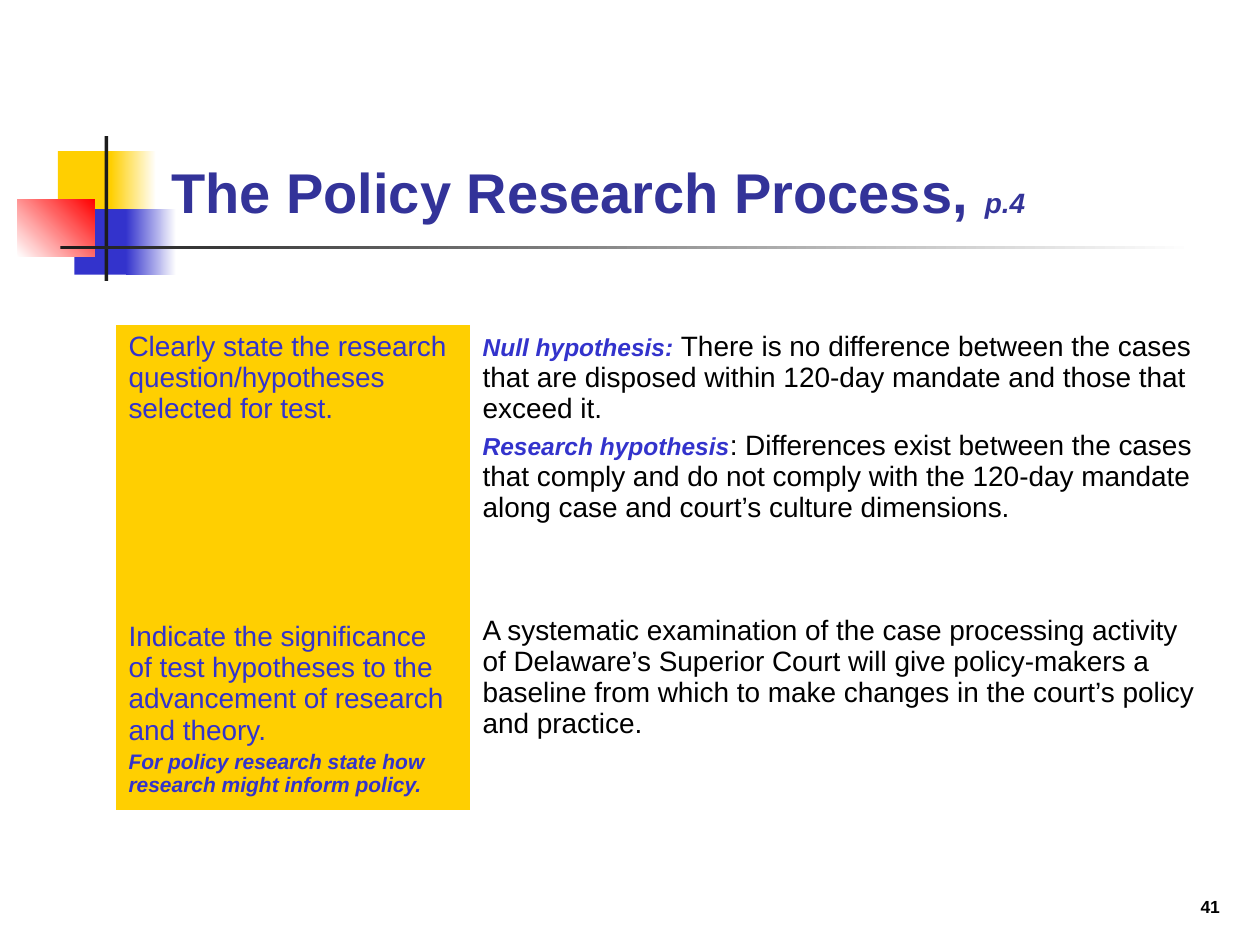
from lxml.etree import SubElement
from pptx import Presentation
from pptx.dml.color import RGBColor
from pptx.enum.shapes import MSO_SHAPE as SHAPE
from pptx.enum.text import MSO_ANCHOR as ANCHOR, PP_ALIGN as ALIGN
from pptx.oxml.ns import qn
from pptx.util import Inches, Pt

# Content
YELLOW, BLUE, RED = "FFCF01", "3333CC", "FF0000"
NAVY, DARK, BLACK, WHITE = "333399", "1C1C1C", "000000", "FFFFFF"
NO_GRID = "{2D5ABB26-0587-4C30-8999-92F81FD0307C}"

# Runs are (text, size, colour, bold, italic)
TITLE = [("The Policy Research Process, ", 32, NAVY, True, False),
         ("p.4", 16, NAVY, True, True)]
NUMBER = [("41", 10, BLACK, True, False)]


def plain(text, color=BLACK):
    return text, 16, color, False, False


def label(text, size=14):
    return text, size, BLUE, True, True


# Rows of cells, each cell a list of paragraphs, each paragraph a list of runs
ROWS = [
    [[[plain("Clearly state the research question/hypotheses selected for test.", BLUE)]],
     [[label("Null hypothesis:"),
       plain(" There is no difference between the cases that are disposed within "
             "120-day mandate and those that exceed it.")],
      [label("Research hypothesis"),
       plain(": Differences exist between the cases that comply and do not comply "
             "with the 120-day mandate along case and court’s culture dimensions.")]]],
    [[[plain("Indicate the significance of test hypotheses to the advancement of "
             "research and theory.", BLUE)],
      [label("For policy research state how research might inform policy.", 12)]],
     [[plain("A systematic examination of the case processing activity of Delaware’s "
             "Superior Court will give policy-makers a baseline from which to make "
             "changes in the court’s policy and practice.")]]],
]
COL_WIDTHS, ROW_HEIGHTS = (2.81, 5.94), (2.25, 1.49)

# Ornament bars: box, colours (two make a gradient), angle
BARS = [
    ((0.46, 1.2, 0.48, 0.52), [YELLOW], 0),
    ((0.88, 1.2, 0.36, 0.52), [YELLOW, WHITE], 0),
    ((0.59, 1.66, 0.46, 0.52), [BLUE], 0),
    ((1, 1.66, 0.4, 0.52), [BLUE, WHITE], 0),
    ((0.14, 1.58, 0.61, 0.46), [WHITE, RED], 45),
    ((0.83, 1.08, 0.03, 1.15), [DARK], 0),
    ((0.48, 1.95, 9, 0.03), [DARK, WHITE], 0),
]


def rgb(value):
    return RGBColor.from_string(value)


def box(values):
    return [Inches(v) for v in values]


def add_runs(p, runs):
    for text, size, color, bold, italic in runs:
        r = p.add_run()
        r.text = text
        r.font.name, r.font.size = "Arial", Pt(size)
        r.font.bold, r.font.italic = bold, italic
        r.font.color.rgb = rgb(color)


def space_before(p, percent):
    spacing = SubElement(p._p.get_or_add_pPr(), qn("a:spcBef"))
    SubElement(spacing, qn("a:spcPct")).set("val", str(percent * 1000))


prs = Presentation()
prs.slide_width, prs.slide_height = Inches(10), Inches(7.5)
s = prs.slides.add_slide(prs.slide_layouts[5])

# Title, with the ornament behind it
title = s.shapes.title
title.left, title.top, title.width, title.height = box((1.26, 0.23, 8.52, 1.6))
tf = title.text_frame
tf.word_wrap, tf.vertical_anchor = True, ANCHOR.BOTTOM
tf.paragraphs[0].alignment = ALIGN.LEFT
add_runs(tf.paragraphs[0], TITLE)

for place, colors, angle in BARS:
    sp = s.shapes.add_shape(SHAPE.RECTANGLE, *box(place))
    sp.shadow.inherit = False
    sp.line.fill.background()
    if len(colors) == 1:
        sp.fill.solid()
        sp.fill.fore_color.rgb = rgb(colors[0])
    else:
        sp.fill.gradient()
        sp.fill.gradient_angle = angle
        for stop, color, position in zip(sp.fill.gradient_stops, colors, (0, 1)):
            stop.color.rgb = rgb(color)
            stop.position = position
    title._element.addprevious(sp._element)

# Slide number
tf = s.shapes.add_textbox(*box((7.7, 6.83, 2.08, 0.5))).text_frame
tf.word_wrap, tf.vertical_anchor = True, ANCHOR.BOTTOM
tf.paragraphs[0].alignment = ALIGN.RIGHT
add_runs(tf.paragraphs[0], NUMBER)

# Table
size = sum(COL_WIDTHS), sum(ROW_HEIGHTS)
table = s.shapes.add_table(len(ROWS), len(COL_WIDTHS), *box((0.92, 2.58, *size))).table
table.first_row = table.horz_banding = False
table._tbl.tblPr.find(qn("a:tableStyleId")).text = NO_GRID
for col, width in zip(table.columns, COL_WIDTHS):
    col.width = Inches(width)
for i, (row, height) in enumerate(zip(ROWS, ROW_HEIGHTS)):
    table.rows[i].height = Inches(height)
    for j, paragraphs in enumerate(row):
        cell = table.cell(i, j)
        if j == 0:
            cell.fill.solid()
            cell.fill.fore_color.rgb = rgb(YELLOW)
        else:
            cell.fill.background()
        cell.vertical_anchor = ANCHOR.MIDDLE if (i, j) == (1, 0) else ANCHOR.TOP
        tf = cell.text_frame
        for k, runs in enumerate(paragraphs):
            p = tf.add_paragraph() if k else tf.paragraphs[0]
            space_before(p, 20)
            add_runs(p, runs)

prs.save("out.pptx")
